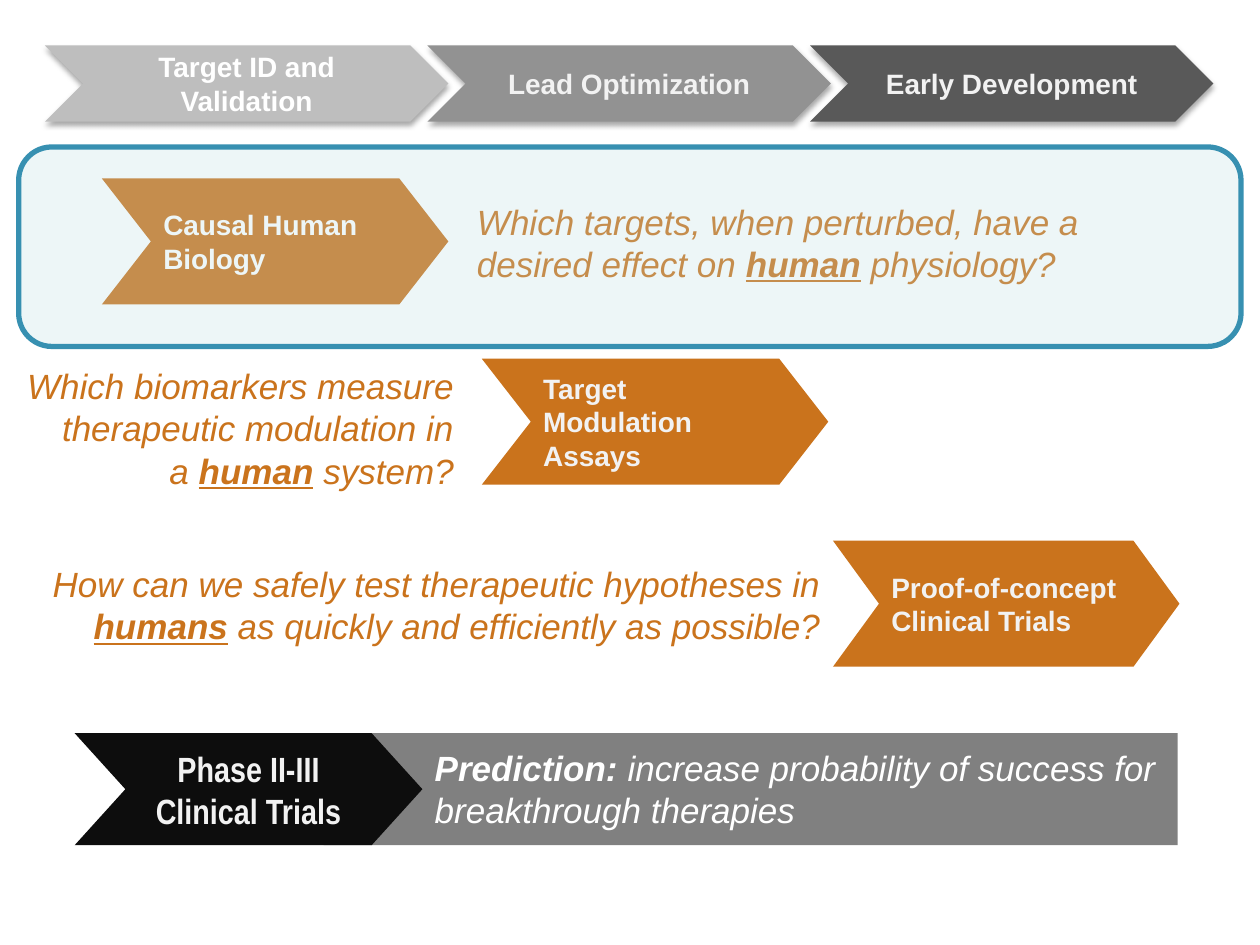
from lxml import etree
from pptx import Presentation
from pptx.dml.color import RGBColor
from pptx.enum.shapes import MSO_SHAPE
from pptx.enum.text import MSO_ANCHOR, MSO_AUTO_SIZE, PP_ALIGN
from pptx.oxml import parse_xml
from pptx.oxml.ns import qn
from pptx.util import Pt

CHEVRON, RECTANGLE, ROUNDED = MSO_SHAPE.CHEVRON, MSO_SHAPE.RECTANGLE, MSO_SHAPE.ROUNDED_RECTANGLE
LEFT, CENTER, RIGHT = PP_ALIGN.LEFT, PP_ALIGN.CENTER, PP_ALIGN.RIGHT
MIDDLE, FIT_TEXT = MSO_ANCHOR.MIDDLE, MSO_AUTO_SIZE.SHAPE_TO_FIT_TEXT

WHITE = RGBColor(0xFF, 0xFF, 0xFF)
OFF_WHITE = RGBColor(0xF2, 0xF2, 0xF2)
ORANGE = RGBColor(0xCA, 0x73, 0x1C)
LIGHT_GRAY = RGBColor(0xBE, 0xBE, 0xBE)
MID_GRAY = RGBColor(0x92, 0x92, 0x92)
DARK_GRAY = RGBColor(0x59, 0x59, 0x59)
BAND_GRAY = RGBColor(0x80, 0x80, 0x80)
NEAR_BLACK = RGBColor(0x0D, 0x0D, 0x0D)
PALE_TEAL = RGBColor(0xBA, 0xDD, 0xE1)
TEAL = RGBColor(0x37, 0x90, 0xB1)

SHADOW = (
    '<a:outerShdw xmlns:a="http://schemas.openxmlformats.org/drawingml/2006/main" '
    'blurRad="39370" dist="22860" dir="5400000" rotWithShape="0">'
    '<a:srgbClr val="000000"><a:alpha val="35000"/></a:srgbClr></a:outerShdw>'
)


def add_block(shapes, kind, box, fill, adjustment=None):
    shape = shapes.add_shape(kind, *[Pt(length) for length in box])
    shape.shadow.inherit = False
    shape.fill.solid()
    shape.fill.fore_color.rgb = fill
    shape.line.fill.background()
    if adjustment is not None:
        shape.adjustments[0] = adjustment
    return shape


def write(shape, runs, size, color, align=LEFT, italic=False, font="Arial"):
    """Each run is (text, bold, underline); a newline is a line break."""
    shape.text_frame.word_wrap = True
    paragraph = shape.text_frame.paragraphs[0]
    paragraph.alignment = align
    for text, bold, underline in runs:
        for index, line in enumerate(text.split("\n")):
            if index:
                paragraph.add_line_break()
            run = paragraph.add_run()
            run.text = line
            run.font.name, run.font.size = font, Pt(size)
            run.font.bold, run.font.italic, run.font.underline = bold, italic, underline
            run.font.color.rgb = color


presentation = Presentation()
presentation.slide_width, presentation.slide_height = Pt(720), Pt(540)
slide = presentation.slides.add_slide(presentation.slide_layouts[6])

# Goals: orange chevron with its question
goals = [
    ((476, 309, 198, 72), 0.365, "Proof-of-concept Clinical Trials", OFF_WHITE,
     (21, 318, 455, 51), RIGHT,
     ("How can we safely test therapeutic hypotheses in ", "humans",
      " as quickly and efficiently as possible?")),
    ((58.2, 102, 198, 72), 0.389, "Causal Human Biology", WHITE,
     (265.5, 111, 382.5, 55.5), LEFT,
     ("Which targets, when perturbed, have a desired effect on ", "human", " physiology?")),
    ((275.3, 205, 198, 72), 0.389, "Target Modulation Assays", OFF_WHITE,
     (-21, 205, 287.5, 73), RIGHT,
     ("Which biomarkers measure therapeutic modulation in\na ", "human", " system?")),
]
for chevron_box, adjustment, label, label_color, question_box, align, question in goals:
    group = slide.shapes.add_group_shape()
    chevron = add_block(group.shapes, CHEVRON, chevron_box, ORANGE, adjustment)
    chevron.text_frame.vertical_anchor = MIDDLE
    write(chevron, [(label, True, False)], 16, label_color)
    text_box = group.shapes.add_textbox(*[Pt(length) for length in question_box])
    before, emphasis, after = question
    write(text_box, [(before, False, False), (emphasis, True, True), (after, False, False)],
          20, ORANGE, align, italic=True)
    text_box.text_frame.auto_size = FIT_TEXT

# Stage chevrons across the top
stages = [
    ("Target ID and Validation", LIGHT_GRAY, WHITE),
    ("Lead Optimization", MID_GRAY, OFF_WHITE),
    ("Early Development", DARK_GRAY, OFF_WHITE),
]
for index, (label, fill, color) in enumerate(stages):
    stage = add_block(slide.shapes, CHEVRON, (25.7 + 218.6 * index, 26, 230.5, 43.5), fill, 0.5)
    stage.element.spPr.find(qn("a:effectLst")).append(parse_xml(SHADOW))
    stage.text_frame.vertical_anchor = MIDDLE
    write(stage, [(label, True, False)], 16, color, CENTER)

# Translucent highlight over the first goal
highlight = add_block(slide.shapes, ROUNDED, (10.7, 84, 698.5, 114), PALE_TEAL)
highlight.line.color.rgb = TEAL
highlight.line.width = Pt(3)
fill_color = highlight.element.spPr.find(qn("a:solidFill")).find(qn("a:srgbClr"))
etree.SubElement(fill_color, qn("a:alpha")).set("val", "25000")

# Prediction band
group = slide.shapes.add_group_shape()
add_block(group.shapes, RECTANGLE, (185, 419, 488, 64), BAND_GRAY)
prediction = group.shapes.add_textbox(Pt(241.3), Pt(423.3), Pt(430.5), Pt(55.5))
write(prediction,
      [("Prediction: ", True, False),
       ("increase probability of success for breakthrough therapies", False, False)],
      20, WHITE, italic=True)
prediction.text_frame.auto_size = FIT_TEXT
phase = add_block(group.shapes, CHEVRON, (42.7, 419, 198.7, 64), NEAR_BLACK, 0.453)
phase.text_frame.vertical_anchor = MIDDLE
write(phase, [("Phase II-III\nClinical Trials", True, False)], 20, OFF_WHITE, CENTER,
      font="Arial Narrow")

presentation.save("out.pptx")
